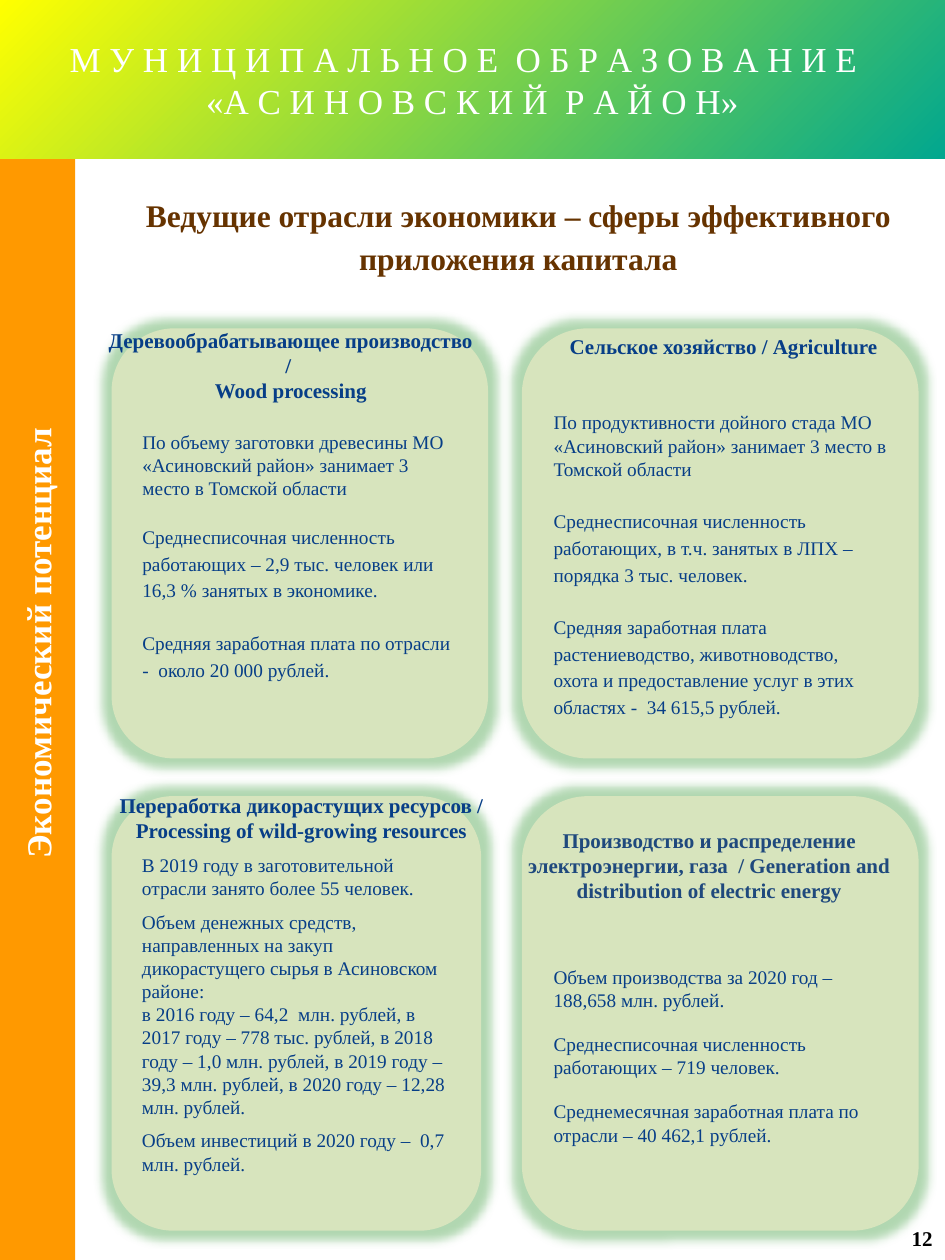
from dataclasses import dataclass

from lxml import etree
from pptx import Presentation
from pptx import util as u
from pptx.dml.color import RGBColor
from pptx.enum import shapes, text
from pptx.oxml import ns


@dataclass(frozen=True)
class Theme:
    font: str = "Times New Roman"
    white: str = "FFFFFF"
    black: str = "000000"
    brown: str = "663300"
    navy: str = "073E87"
    slate: str = "1F497D"
    orange: str = "FF9900"
    card: str = "D7E4BD"
    glow: str = "3E9D3E"
    banner: tuple = ("FFFF00", "01A78F")
    banner_size: float = 20
    heading_size: float = 18
    label_size: float = 12
    body_size: float = 11


class Poster:
    """Holds the theme and the current page; lengths are in centimetres."""

    def __init__(self, page, theme):
        self.page, self.theme = page, theme

    def set_text(self, shape, paragraphs, size, color, bold=False, align=text.PP_ALIGN.CENTER,
                 anchor=text.MSO_ANCHOR.MIDDLE):
        """Each paragraph is (words, line spacing, points before)."""
        frame = shape.text_frame
        frame.word_wrap, frame.auto_size = True, text.MSO_AUTO_SIZE.NONE
        frame.vertical_anchor = anchor
        for index, (words, spacing, before) in enumerate(paragraphs):
            para = frame.add_paragraph() if index else frame.paragraphs[0]
            para.text = words
            para.alignment, para.line_spacing = align, spacing
            para.space_before = u.Pt(before)
            for span in para.runs:
                span.font.name, span.font.size = self.theme.font, u.Pt(size)
                span.font.bold = bold
                span.font.color.rgb = RGBColor.from_string(color)

    def banner(self, words, place):
        title = self.page.shapes.title
        title.left, title.top, title.width, title.height = map(u.Cm, place)
        title.fill.gradient()
        title.fill.gradient_angle = 315
        for stop, color in zip(title.fill.gradient_stops, self.theme.banner):
            stop.color.rgb = RGBColor.from_string(color)
        self.set_text(title, [(words, 1, 0)], self.theme.banner_size, self.theme.white)
        # The banner lies over the top end of the side bar
        title.element.getparent().append(title.element)

    def block(self, kind, place, color):
        shape = self.page.shapes.add_shape(kind, *map(u.Cm, place))
        shape.shadow.inherit = False
        shape.fill.solid()
        shape.fill.fore_color.rgb = RGBColor.from_string(color)
        shape.line.fill.background()
        return shape

    def side_bar(self, words, place, indent):
        bar = self.block(shapes.MSO_SHAPE.RECTANGLE, place, self.theme.orange)
        bar.rotation = 270
        bar.text_frame.margin_left = u.Cm(indent)
        self.set_text(bar, [(words, 1, 0)], self.theme.banner_size, self.theme.white, bold=True)

    def label(self, paragraphs, place, size, color, spacing=1, **style):
        box = self.page.shapes.add_textbox(*map(u.Cm, place))
        self.set_text(box, [(words, spacing, 0) for words in paragraphs], size, color,
                      bold=True, **style)

    def card(self, paragraphs, place, inset):
        card = self.block(shapes.MSO_SHAPE.ROUNDED_RECTANGLE, place, self.theme.card)
        effects = card.element.spPr.find(ns.qn("a:effectLst"))
        glow = etree.SubElement(effects, ns.qn("a:glow"), rad=str(u.Pt(11)))
        tint = etree.SubElement(glow, ns.qn("a:srgbClr"), val=self.theme.glow)
        etree.SubElement(tint, ns.qn("a:alpha"), val="40000")
        card.text_frame.margin_top = u.Cm(inset)
        self.set_text(card, paragraphs, self.theme.body_size, self.theme.navy,
                      align=text.PP_ALIGN.LEFT, anchor=text.MSO_ANCHOR.TOP)


def main():
    deck = Presentation()
    deck.slide_width, deck.slide_height = u.Cm(19.05), u.Cm(25.4)
    theme = Theme()
    poster = Poster(deck.slides.add_slide(deck.slide_layouts[5]), theme)
    top = text.MSO_ANCHOR.TOP

    # Frame of the page
    poster.side_bar("Экономический потенциал", (-10.8, 13.08, 23.11, 1.52), 2)
    poster.banner("М У Н И Ц И П А Л Ь Н О Е  О Б Р А З О В А Н И Е  \v"
                  "«А С И Н О В С К И Й  Р А Й О Н»", (0, 0, 19.05, 3.2))
    poster.label(["Ведущие отрасли экономики – сферы эффективного приложения капитала"],
                 (1.85, 3.71, 17.2, 2.03), theme.heading_size, theme.brown, 1.15, anchor=top)
    poster.label(["12"], (17.88, 24.46, 1.17, 0.99), theme.label_size, theme.black,
                 align=text.PP_ALIGN.RIGHT)

    # Cards: place, inset above the text, paragraphs
    left, right, upper, lower = 2.25, 10.52, 6.62, 16.05
    cards = [
        ((left, upper, 7.59, 8.67), 1.68, [
            ("По объему заготовки древесины МО «Асиновский район» занимает 3 место "
             "в Томской области", 1, 0),
            ("Среднесписочная численность работающих – 2,9 тыс. человек или 16,3 % "
             "занятых в экономике.", 1.15, 13),
            ("Средняя заработная плата по отрасли -  около 20 000 рублей.", 1.15, 15)]),
        ((right, upper, 8, 8.67), 1.27, [
            ("По продуктивности дойного стада МО «Асиновский район» занимает 3 место "
             "в Томской области", 1, 0),
            ("Среднесписочная численность работающих, в т.ч. занятых в ЛПХ – "
             "порядка 3 тыс. человек.", 1.15, 15),
            ("Средняя заработная плата растениеводство, животноводство, охота и "
             "предоставление услуг в этих областях -  34 615,5 рублей.", 1.15, 15)]),
        ((left, lower, 7.45, 8.76), 0.79, [
            ("В 2019 году в заготовительной отрасли занято более 55 человек.", 1, 0),
            ("Объем денежных средств, направленных на закуп дикорастущего сырья "
             "в Асиновском районе:", 1, 6),
            ("в 2016 году – 64,2  млн. рублей, в 2017 году – 778 тыс. рублей, "
             "в 2018 году – 1,0 млн. рублей, в 2019 году – 39,3 млн. рублей, "
             "в 2020 году – 12,28 млн. рублей.", 1, 0),
            ("Объем инвестиций в 2020 году –  0,7 млн. рублей.", 1, 6)]),
        ((right, lower, 8, 8.76), 3.02, [
            ("Объем производства за 2020 год – 188,658 млн. рублей.", 1, 0),
            ("Среднесписочная численность работающих – 719 человек.", 1, 12),
            ("Среднемесячная заработная плата по отрасли – 40 462,1 рублей.", 1, 12)]),
    ]
    for place, inset, paragraphs in cards:
        poster.card(paragraphs, place, inset)

    # Card headings
    headings = [
        (["Деревообрабатывающее производство / ", "Wood processing"],
         (1.93, 6.48, 7.87, 1.8), theme.navy),
        (["Сельское хозяйство / Agriculture"], (11.2, 6.6, 6.78, 0.76), theme.navy),
        (["Переработка дикорастущих ресурсов / Processing of wild-growing resources"],
         (1.9, 15.85, 8.36, 1.28), theme.navy),
        (["Производство и распределение электроэнергии, газа  / Generation and "
          "distribution of electric energy"], (10.26, 16.55, 8.08, 1.8), theme.slate),
    ]
    for paragraphs, place, color in headings:
        poster.label(paragraphs, place, theme.label_size, color, anchor=top)

    deck.save("out.pptx")


if __name__ == "__main__":
    main()
